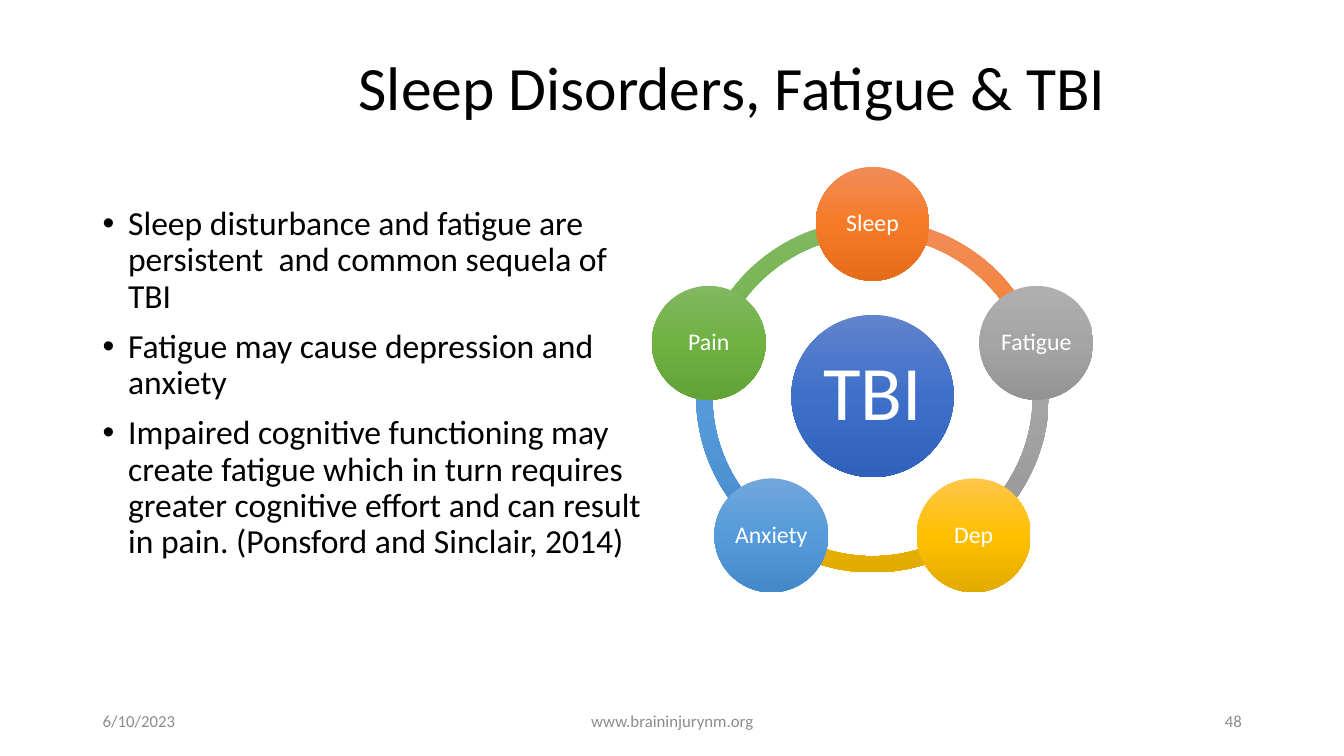
from copy import deepcopy
from dataclasses import dataclass
from math import cos, radians, sin

from lxml.etree import SubElement
from pptx import Presentation
from pptx.dml.color import RGBColor
from pptx.enum.shapes import MSO_SHAPE
from pptx.enum.text import MSO_ANCHOR, PP_ALIGN
from pptx.oxml.ns import qn
from pptx.util import Cm, Pt


@dataclass(frozen=True)
class Theme:
    font: str = "Calibri"
    ink: str = "000000"
    muted: str = "8C8C8C"
    light: str = "FFFFFF"
    title: int = 44
    body: int = 24
    hub: int = 55
    node: int = 17
    footer: int = 12
    blue: tuple = ("6183CB", "3E70CA", "3062BB")
    orange: tuple = ("F18C57", "F67B28", "E56C19")
    gray: tuple = ("AFAFAF", "A5A5A5", "939393")
    gold: tuple = ("FFC64B", "FFC000", "E3AB00")
    sky: tuple = ("71A6DB", "559BDB", "448ACA")
    green: tuple = ("81B861", "6FB242", "62A336")


class SlideBuilder:
    def __init__(self, slide, theme):
        self.slide = slide
        self.theme = theme

    def style(self, paragraph, size, color, align=PP_ALIGN.LEFT, spacing=1.0):
        paragraph.alignment = align
        paragraph.line_spacing = spacing
        font = paragraph.font
        font.name, font.size = self.theme.font, Pt(size)
        font.color.rgb = RGBColor.from_string(color)

    def frame(self, left, top, width, height, anchor):
        box = self.slide.shapes.add_textbox(Cm(left), Cm(top), Cm(width), Cm(height))
        box.text_frame.word_wrap = True
        box.text_frame.vertical_anchor = anchor
        return box.text_frame

    def text(self, wording, area, size, color, align=PP_ALIGN.LEFT, spacing=1.0):
        paragraph = self.frame(*area, MSO_ANCHOR.MIDDLE).paragraphs[0]
        paragraph.text = wording
        self.style(paragraph, size, color, align, spacing)

    def bullets(self, points, area):
        frame = self.frame(*area, MSO_ANCHOR.TOP)
        for index, point in enumerate(points):
            paragraph = frame.add_paragraph() if index else frame.paragraphs[0]
            paragraph.text = point
            properties = paragraph._p.get_or_add_pPr()
            properties.set("marL", str(Cm(0.64)))
            properties.set("indent", str(-Cm(0.64)))
            SubElement(properties, qn("a:buFont")).set("typeface", "Arial")
            SubElement(properties, qn("a:buChar")).set("char", "•")
            self.style(paragraph, self.theme.body, self.theme.ink, spacing=0.9)
            if index:
                paragraph.space_before = Pt(10)

    def round_shape(self, preset, center, diameter, shades):
        x, y = center
        shape = self.slide.shapes.add_shape(
            preset, Cm(x - diameter / 2), Cm(y - diameter / 2), Cm(diameter), Cm(diameter))
        shape.shadow.inherit = False
        shape.line.fill.background()
        shape.fill.gradient()
        shape.fill.gradient_angle = 270
        stops = shape._element.spPr.find(qn("a:gradFill")).find(qn("a:gsLst"))
        stops.append(deepcopy(stops[0]))
        for index, (stop, shade) in enumerate(zip(shape.fill.gradient_stops, shades)):
            stop.position = index / 2
            stop.color.rgb = RGBColor.from_string(shade)
        return shape

    def arc(self, center, diameter, start, sweep, shades):
        arc = self.round_shape(MSO_SHAPE.BLOCK_ARC, center, diameter, shades)
        arc.adjustments[0] = start % 360 * 0.6
        arc.adjustments[1] = (start + sweep) % 360 * 0.6
        arc.adjustments[2] = 0.046

    def circle(self, wording, center, diameter, shades, size, inset):
        frame = self.round_shape(MSO_SHAPE.OVAL, center, diameter, shades).text_frame
        frame.margin_left = frame.margin_right = Cm(inset)
        frame.margin_top = frame.margin_bottom = Cm(inset)
        frame.vertical_anchor = MSO_ANCHOR.MIDDLE
        paragraph = frame.paragraphs[0]
        paragraph.text = wording
        self.style(paragraph, size, self.theme.light, PP_ALIGN.CENTER, 0.9)

    def cycle(self, hub, factors, center):
        x, y = center
        sweep = 360 / len(factors)
        placed = [(name, shades, 270 + sweep * index)
                  for index, (name, shades) in enumerate(factors)]
        for _, shades, angle in reversed(placed):
            self.arc(center, 8.89, angle, sweep, shades)
        self.circle(hub, center, 4.09, self.theme.blue, self.theme.hub, 0.2)
        for name, shades, angle in placed:
            spot = (x + 4.34 * cos(radians(angle)), y + 4.34 * sin(radians(angle)))
            self.circle(name, spot, 2.87, shades, self.theme.node, 0.05)


def main():
    presentation = Presentation()
    presentation.slide_width, presentation.slide_height = Cm(33.87), Cm(19.05)
    theme = Theme()
    builder = SlideBuilder(
        presentation.slides.add_slide(presentation.slide_layouts[6]), theme)

    builder.text("Sleep Disorders, Fatigue & TBI", (8.79, 1.04, 22.17, 2.51),
                 theme.title, theme.ink, spacing=0.9)
    builder.bullets([
        "Sleep disturbance and fatigue are persistent  and common sequela of TBI",
        "Fatigue may cause depression and anxiety",
        "Impaired cognitive functioning may create fatigue which in turn requires "
        "greater cognitive effort and can result in pain. (Ponsford and Sinclair, 2014)",
    ], (2.34, 5.08, 14.33, 12.09))
    builder.cycle("TBI", [
        ("Sleep", theme.orange),
        ("Fatigue", theme.gray),
        ("Dep", theme.gold),
        ("Anxiety", theme.sky),
        ("Pain", theme.green),
    ], (21.99, 9.98))
    for wording, left, width, align in (
        ("6/10/2023", 2.34, 7.62, PP_ALIGN.LEFT),
        ("www.braininjurynm.org", 11.23, 11.43, PP_ALIGN.CENTER),
        ("48", 23.93, 7.62, PP_ALIGN.RIGHT),
    ):
        builder.text(wording, (left, 17.65, width, 1.02), theme.footer, theme.muted, align)

    presentation.save("out.pptx")


if __name__ == "__main__":
    main()
